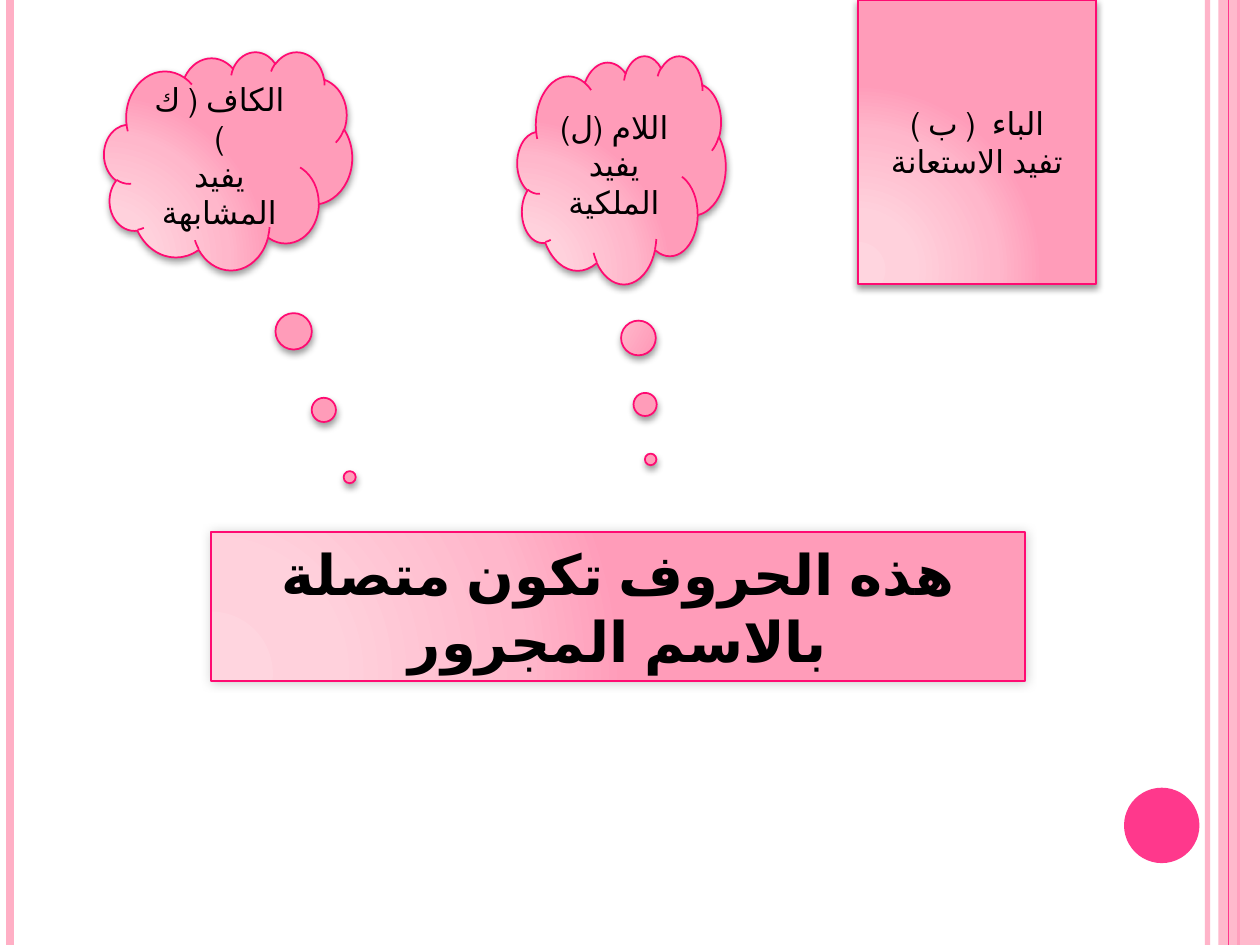
from lxml import etree
from pptx import Presentation
from pptx.dml.color import RGBColor
from pptx.enum.lang import MSO_LANGUAGE_ID
from pptx.enum.shapes import MSO_CONNECTOR, MSO_SHAPE
from pptx.enum.text import MSO_ANCHOR, MSO_AUTO_SIZE, PP_ALIGN
from pptx.oxml.ns import qn
from pptx.util import Cm, Pt

RECTANGLE = MSO_SHAPE.RECTANGLE
ELLIPSE = MSO_SHAPE.OVAL
CLOUD = MSO_SHAPE.CLOUD_CALLOUT
STRAIGHT = MSO_CONNECTOR.STRAIGHT
ARABIC = MSO_LANGUAGE_ID.ARABIC

SLIDE_WIDTH, SLIDE_HEIGHT = 25.4, 19.05
FONT = "TeX Gyre Schola"
PALE, PINK, OUTLINE, BLACK = "FFAFC5", "FF388C", "FF0B72", "000000"
GRADIENT = [(0, "FFD5DF"), (30, "FFD1DC"), (75, "FFB7CB"), (100, "FF9CB9")]
GRADIENT_CENTRE = {"l": 5, "t": 100, "r": 120, "b": 10}

# Shadows: opacity %, blur pt, distance pt, direction in degrees
DROP_SHADOW = (40, 4, 2, 90)
GLOW_SHADOW = (20, 6, 0, 315)

# Vertical rules: x in cm, colour, width in pt, opacity %
RULES_BEHIND_BAND = [(24.34, PALE, 3, 93), (0.21, PALE, 4.5, 100), (24.97, PINK, 1.5, 100)]
RULE_ON_BAND = (24.77, PINK, 0.75, 100)
# Boxes in cm: left, top, width, height
BAND_BOX = (24.56, 0, 0.84, SLIDE_HEIGHT)
DOT_BOX = (22.66, 15.88, 1.52, 1.52)

TITLE_BOX = (17.29, 0, 4.81, 5.72)
TITLE_LINES = ["الباء  ( ب )", "تفيد الاستعانة"]
# Clouds: box, tail position, lines
CLOUDS = [
    ((10.43, 1.12, 4.2, 4.6), (0.14, 1.27), ["اللام (ل)", "يفيد الملكية"]),
    ((2.1, 1.04, 5, 4.4), (0.49, 1.45), ["الكاف ( ك )", "يفيد المشابهة"]),
]
BANNER_BOX = (4.25, 10.72, 16.42, 3.01)
BANNER_LINES = ["هذه الحروف تكون متصلة بالاسم المجرور"]


def colour(value):
    return RGBColor.from_string(value)


def add_element(parent, tag, **attributes):
    return etree.SubElement(parent, qn(tag), {k: str(v) for k, v in attributes.items()})


def set_opacity(fill, percent):
    if percent < 100:
        solid = fill._xPr.find(qn("a:solidFill"))
        add_element(solid[0], "a:alpha", val=percent * 1000)


def add_rule(slide, x, line_colour, width, opacity):
    rule = slide.shapes.add_connector(STRAIGHT, Cm(x), 0, Cm(x), Cm(SLIDE_HEIGHT))
    rule.line.color.rgb = colour(line_colour)
    rule.line.width = Pt(width)
    set_opacity(rule.line.fill, opacity)
    add_element(rule._element.spPr, "a:effectLst")


def add_shape(slide, kind, box):
    return slide.shapes.add_shape(kind, *map(Cm, box))


def add_plain_shape(slide, kind, box, fill_colour, opacity=100):
    shape = add_shape(slide, kind, box)
    shape.shadow.inherit = False
    shape.fill.solid()
    shape.fill.fore_color.rgb = colour(fill_colour)
    set_opacity(shape.fill, opacity)
    shape.line.fill.background()


def style_panel(shape, shadow):
    """Give a shape the radial pink gradient, the outline and a soft shadow."""
    properties = shape._element.spPr
    shape.fill.solid()
    gradient = etree.Element(qn("a:gradFill"), rotWithShape="1")
    stops = add_element(gradient, "a:gsLst")
    for position, value in GRADIENT:
        stop = add_element(stops, "a:gs", pos=position * 1000)
        add_element(stop, "a:srgbClr", val=value)
    radial = add_element(gradient, "a:path", path="circle")
    add_element(radial, "a:fillToRect", **{k: v * 1000 for k, v in GRADIENT_CENTRE.items()})
    properties.replace(properties.find(qn("a:solidFill")), gradient)

    shape.line.color.rgb = colour(OUTLINE)
    shape.line.width = Pt(1)

    shape.shadow.inherit = False
    opacity, blur, distance, direction = shadow
    outer = add_element(properties.find(qn("a:effectLst")), "a:outerShdw",
                        blurRad=Pt(blur), dist=Pt(distance),
                        dir=direction * 60000, rotWithShape=0)
    shadow_colour = add_element(outer, "a:srgbClr", val=BLACK)
    add_element(shadow_colour, "a:alpha", val=opacity * 1000)


def write_lines(shape, lines, size, bold=False):
    """Write centred right-to-left paragraphs."""
    frame = shape.text_frame
    frame.word_wrap = True
    frame.auto_size = MSO_AUTO_SIZE.NONE
    frame.vertical_anchor = MSO_ANCHOR.MIDDLE
    for index, line in enumerate(lines):
        paragraph = frame.add_paragraph() if index else frame.paragraphs[0]
        paragraph.alignment = PP_ALIGN.CENTER
        paragraph._p.get_or_add_pPr().set("rtl", "1")
        run = paragraph.add_run()
        run.text = line
        run.font.size = Pt(size)
        run.font.bold = bold
        run.font.color.rgb = colour(BLACK)
        run.font.name = FONT
        run.font.language_id = ARABIC


def main():
    presentation = Presentation()
    presentation.slide_width, presentation.slide_height = Cm(SLIDE_WIDTH), Cm(SLIDE_HEIGHT)
    slide = presentation.slides.add_slide(presentation.slide_layouts[5])

    for rule in RULES_BEHIND_BAND:
        add_rule(slide, *rule)
    add_plain_shape(slide, RECTANGLE, BAND_BOX, PALE, opacity=87)
    add_rule(slide, *RULE_ON_BAND)
    add_plain_shape(slide, ELLIPSE, DOT_BOX, PINK)

    title = slide.shapes.title
    title.left, title.top, title.width, title.height = map(Cm, TITLE_BOX)
    style_panel(title, DROP_SHADOW)
    write_lines(title, TITLE_LINES, 18)

    for box, tail, lines in CLOUDS:
        cloud = add_shape(slide, CLOUD, box)
        cloud.adjustments[0], cloud.adjustments[1] = tail
        style_panel(cloud, DROP_SHADOW)
        write_lines(cloud, lines, 18)

    banner = add_shape(slide, RECTANGLE, BANNER_BOX)
    style_panel(banner, GLOW_SHADOW)
    write_lines(banner, BANNER_LINES, 32, bold=True)

    presentation.save("out.pptx")


if __name__ == "__main__":
    main()
